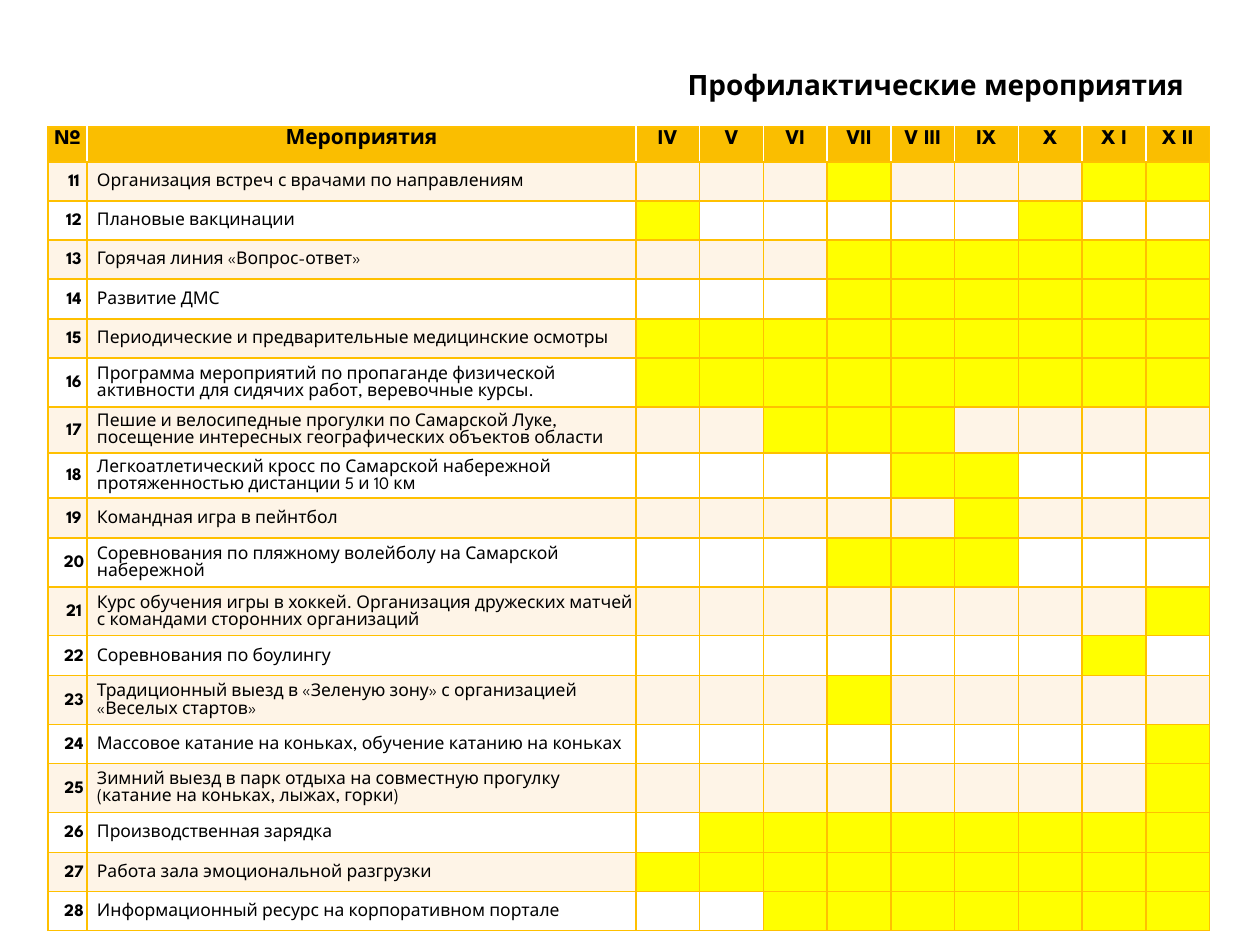
from lxml import etree
from pptx import Presentation
from pptx.dml.color import RGBColor
from pptx.enum.text import MSO_ANCHOR, MSO_AUTO_SIZE, PP_ALIGN
from pptx.oxml.ns import qn
from pptx.util import Pt

PX = 914400 // 126
FONT = "League Spartan"
LEFT, CENTER, RIGHT = PP_ALIGN.LEFT, PP_ALIGN.CENTER, PP_ALIGN.RIGHT
TOP, MIDDLE = MSO_ANCHOR.TOP, MSO_ANCHOR.MIDDLE
BLACK = RGBColor(0x00, 0x00, 0x00)
WHITE = RGBColor(0xFF, 0xFF, 0xFF)
AMBER = RGBColor(0xFA, 0xBE, 0x00)
GOLD = RGBColor(0xFF, 0xC0, 0x00)
CREAM = RGBColor(0xFE, 0xF4, 0xE7)
YELLOW = RGBColor(0xFF, 0xFF, 0x00)

HEADINGS = ["№", "Мероприятия", "IV", "V", "VI", "VII", "V III", "IX", "X", "X I", "X II"]
HEADER_HEIGHT = 35
FIRST_NUMBER = 11
ACTIVITIES = [
    ("Организация встреч с врачами по направлениям", "...#...##", 39),
    ("Плановые вакцинации", "#.....#..", 39),
    ("Горячая линия «Вопрос-ответ»", "...######", 39),
    ("Развитие ДМС", "...######", 40),
    ("Периодические и предварительные медицинские осмотры", "#########", 39),
    ("Программа мероприятий по пропаганде физической активности для сидячих работ, "
     "веревочные курсы.", "#########", 49),
    ("Пешие и велосипедные прогулки по Самарской Луке, посещение интересных "
     "географических объектов области", "..###....", 46),
    ("Легкоатлетический кросс по Самарской набережной протяженностью дистанции "
     "5 и 10 км", "....##...", 45),
    ("Командная игра в пейнтбол", ".....#...", 40),
    ("Соревнования по пляжному волейболу на Самарской набережной", "...###...", 49),
    ("Курс обучения игры в хоккей. Организация дружеских матчей с командами "
     "сторонних организаций", "........#", 49),
    ("Соревнования по боулингу", ".......#.", 40),
    ("Традиционный выезд в «Зеленую зону» с организацией «Веселых стартов»",
     "...#.....", 49),
    ("Массовое катание на коньках, обучение катанию на коньках", "........#", 39),
    ("Зимний выезд в парк отдыха на совместную прогулку (катание на коньках, лыжах, "
     "горки)", "........#", 49),
    ("Производственная зарядка", ".########", 40),
    ("Работа зала эмоциональной разгрузки", "#########", 39),
    ("Информационный ресурс на корпоративном портале", "..#######", 39),
]


def write_text(frame, text, size=10, bold=False, align=LEFT, indent=0, spacing=None, after=None):
    paragraph = frame.paragraphs[0]
    paragraph.alignment = align
    paragraph.line_spacing = spacing
    paragraph.space_after = after
    if indent:
        paragraph._p.get_or_add_pPr().set("marL", str(indent * PX))
    if not text:
        paragraph._p.get_or_add_endParaRPr().set("sz", str(size * 100))
        return
    run = paragraph.add_run()
    run.text = text
    run.font.name = FONT
    run.font.size = Pt(size)
    run.font.bold = bold
    run.font.color.rgb = BLACK


def style_cell(cell, fill, anchor, left=GOLD, right=GOLD):
    properties = cell._tc.get_or_add_tcPr()
    for side, color in (("L", left), ("R", right), ("T", GOLD), ("B", GOLD)):
        line = etree.SubElement(properties, qn(f"a:ln{side}"), w=str(Pt(1)))
        solid = etree.SubElement(line, qn("a:solidFill"))
        etree.SubElement(solid, qn("a:srgbClr"), val=str(color))
    cell.fill.solid()
    cell.fill.fore_color.rgb = fill
    cell.vertical_anchor = anchor
    side_margin = 0 if anchor == TOP else PX
    cell.margin_left = cell.margin_right = side_margin
    cell.margin_top = PX
    cell.margin_bottom = 0


presentation = Presentation()
presentation.slide_width = 1260 * PX
presentation.slide_height = 945 * PX
slide = presentation.slides.add_slide(presentation.slide_layouts[5])

title = slide.shapes.title
title.left, title.top, title.width, title.height = 98 * PX, 55 * PX, 1099 * PX, 59 * PX
title.text_frame.auto_size = MSO_AUTO_SIZE.NONE
title.text_frame.vertical_anchor = MIDDLE
write_text(title.text_frame, "Профилактические мероприятия", size=16, bold=True, align=RIGHT)

row_heights = [HEADER_HEIGHT] + [height for _, _, height in ACTIVITIES]
column_widths = [39 * PX, 549 * PX] + [574 * PX // 9] * 9
table = slide.shapes.add_table(
    len(row_heights), len(column_widths), 48 * PX, 127 * PX,
    sum(column_widths), sum(row_heights) * PX).table
table.horz_banding = False
for column, width in zip(table.columns, column_widths):
    column.width = width
for row, height in zip(table.rows, row_heights):
    row.height = height * PX

paragraph_format = {"spacing": 1.07, "after": Pt(8)}
last = len(HEADINGS) - 1
for index, heading in enumerate(HEADINGS):
    cell = table.cell(0, index)
    style_cell(cell, AMBER, TOP, left=WHITE if index else GOLD,
               right=WHITE if index < last else GOLD)
    write_text(cell.text_frame, heading, size=12, bold=True, align=CENTER, **paragraph_format)

for row_index, (activity, months, _) in enumerate(ACTIVITIES, start=1):
    band = CREAM if row_index % 2 else WHITE
    number_cell = table.cell(row_index, 0)
    style_cell(number_cell, band, MIDDLE)
    number = str(FIRST_NUMBER + row_index - 1)
    write_text(number_cell.text_frame, number, bold=True, align=CENTER, indent=13,
               **paragraph_format)
    activity_cell = table.cell(row_index, 1)
    style_cell(activity_cell, band, MIDDLE)
    write_text(activity_cell.text_frame, activity, indent=9, **paragraph_format)
    for column_index, mark in enumerate(months, start=2):
        month_cell = table.cell(row_index, column_index)
        style_cell(month_cell, YELLOW if mark == "#" else band, MIDDLE)
        write_text(month_cell.text_frame, "")

presentation.save("out.pptx")
